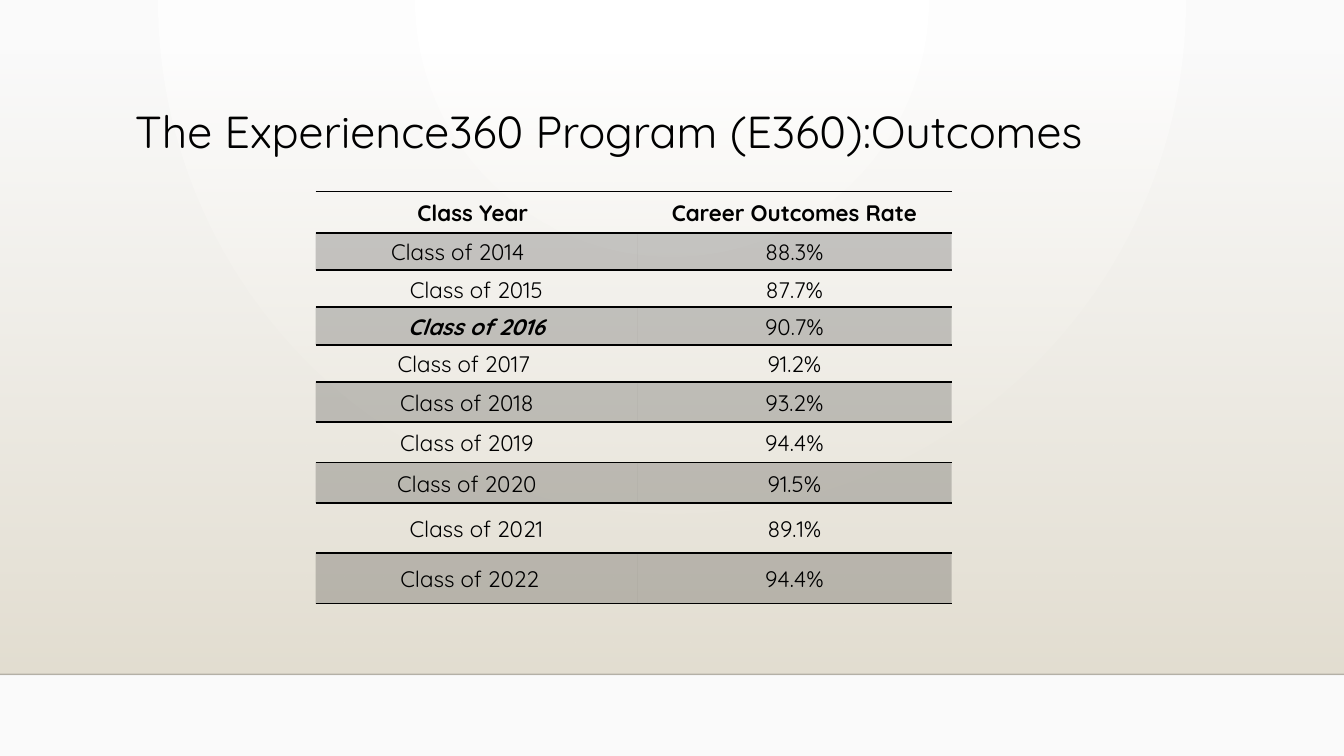
import pptx
import pptx.dml.color
import pptx.enum.shapes
import pptx.enum.text
import pptx.oxml
import pptx.oxml.ns
import pptx.util
from pptx.util import Inches

FONT = "Quicksand"
BLACK = "000000"
NO_STYLE_NO_GRID = "{2D5ABB26-0587-4C30-8999-92F81FD0307C}"
NAMESPACE = 'xmlns:a="http://schemas.openxmlformats.org/drawingml/2006/main"'

COLUMN_WIDTHS = [3.19, 3.12]
ROW_HEIGHTS = [0.41] + [0.37] * 4 + [0.4] * 3 + [0.5] * 2
CELL_MARGIN = 0.07
# Year, career outcomes rate, extra right margin of the year's cell
OUTCOMES = [
    (2014, "88.3%", 0.37),
    (2015, "87.7%", 0),
    (2016, "90.7%", 0),
    (2017, "91.2%", 0.25),
    (2018, "93.2%", 0.19),
    (2019, "94.4%", 0.19),
    (2020, "91.5%", 0.19),
    (2021, "89.1%", 0),
    (2022, "94.4%", 0.13),
]
HIGHLIGHTED_YEAR = 2016


def rgb(color):
    return pptx.dml.color.RGBColor.from_string(color)


def set_opacity(element, percent):
    """Set the opacity of the first RGB colour inside an XML element."""
    color = next(element.iter(pptx.oxml.ns.qn("a:srgbClr")))
    color.append(pptx.oxml.parse_xml(f'<a:alpha {NAMESPACE} val="{percent * 1000}"/>'))


def fill_gradient(fill, *colors):
    fill.gradient()
    for stop, color in zip(fill.gradient_stops, colors):
        stop.color.rgb = rgb(color)


def set_background(slide):
    """Give the slide a round glow that starts at the middle of its top edge."""
    fill_gradient(slide.background.fill, "FFFFFF", "FAFAFA")
    linear = next(slide.element.iter(pptx.oxml.ns.qn("a:lin")))
    glow = pptx.oxml.parse_xml(
        f'<a:path {NAMESPACE} path="circle">'
        '<a:fillToRect l="43000" t="0" r="43000" b="100000"/></a:path>'
    )
    linear.getparent().replace(linear, glow)


def add_backdrop(slide, top, height):
    backdrop = slide.shapes.add_shape(
        pptx.enum.shapes.MSO_SHAPE.RECTANGLE,
        0, Inches(top), Inches(13.33), Inches(height),
    )
    backdrop.shadow.inherit = False
    backdrop.line.fill.background()
    fill_gradient(backdrop.fill, "E3DED1", "E4E0D3")
    backdrop.fill.gradient_angle = 270
    set_opacity(backdrop._element.spPr, 0)


def add_floor_line(slide, top):
    floor = slide.shapes.add_connector(
        pptx.enum.shapes.MSO_CONNECTOR.STRAIGHT,
        0, Inches(top), Inches(13.33), Inches(top),
    )
    floor.line.color.rgb = rgb("000001")
    floor.line.width = pptx.util.Pt(1)
    properties = floor._element.spPr
    set_opacity(properties, 20)
    properties.append(pptx.oxml.parse_xml(f"<a:effectLst {NAMESPACE}/>"))


def style_paragraph(paragraph, size, line_spacing):
    paragraph.line_spacing = line_spacing
    paragraph.font.name = FONT
    paragraph.font.size = pptx.util.Pt(size)
    paragraph.font.color.rgb = rgb(BLACK)


def add_title(slide, text):
    title = slide.shapes.add_textbox(
        Inches(1.24), Inches(1.04), Inches(11.06), Inches(1.15)
    )
    title.text_frame.word_wrap = True
    title.text_frame.text = text
    style_paragraph(title.text_frame.paragraphs[0], 32, 0.9)


def set_rules(cell, top, bottom):
    """Draw the cell's top and bottom borders, with widths in points."""
    properties = cell._tc.get_or_add_tcPr()
    for tag, width in (("lnT", top), ("lnB", bottom)):
        properties.append(pptx.oxml.parse_xml(
            f'<a:{tag} {NAMESPACE} w="{pptx.util.Pt(width)}"><a:solidFill>'
            f'<a:srgbClr val="{BLACK}"/></a:solidFill></a:{tag}>'
        ))


def fill_cell(cell, text, shaded, extra_margin=0):
    if shaded:
        cell.fill.solid()
        cell.fill.fore_color.rgb = rgb(BLACK)
        set_opacity(cell._tc.tcPr.find(pptx.oxml.ns.qn("a:solidFill")), 20)
    else:
        cell.fill.background()
    cell.margin_left = Inches(CELL_MARGIN)
    cell.margin_right = Inches(CELL_MARGIN + extra_margin)
    cell.margin_top = cell.margin_bottom = 0
    cell.vertical_anchor = pptx.enum.text.MSO_ANCHOR.MIDDLE
    cell.text = text
    paragraph = cell.text_frame.paragraphs[0]
    paragraph.alignment = pptx.enum.text.PP_ALIGN.CENTER
    style_paragraph(paragraph, 16, 1.07)
    return paragraph.font


def add_outcomes_table(slide):
    table = slide.shapes.add_table(
        len(ROW_HEIGHTS), len(COLUMN_WIDTHS), Inches(3.13), Inches(1.9),
        Inches(sum(COLUMN_WIDTHS)), Inches(sum(ROW_HEIGHTS)),
    ).table
    table.horz_banding = False
    style = next(table._tbl.iter(pptx.oxml.ns.qn("a:tableStyleId")))
    style.text = NO_STYLE_NO_GRID
    for column, width in zip(table.columns, COLUMN_WIDTHS):
        column.width = Inches(width)

    last = len(ROW_HEIGHTS) - 1
    for index, (row, height) in enumerate(zip(table.rows, ROW_HEIGHTS)):
        row.height = Inches(height)
        for cell in row.cells:
            set_rules(cell, 1 if index == 0 else 1.5, 1 if index == last else 1.5)

    fill_cell(table.cell(0, 0), "Class Year", False, 0.07).bold = True
    fill_cell(table.cell(0, 1), "Career Outcomes Rate", False).bold = True
    for index, (year, rate, extra_margin) in enumerate(OUTCOMES, start=1):
        shaded = index % 2 == 1
        year_font = fill_cell(
            table.cell(index, 0), f"Class of {year}", shaded, extra_margin
        )
        year_font.bold = year_font.italic = year == HIGHLIGHTED_YEAR
        fill_cell(table.cell(index, 1), rate, shaded)


def main():
    presentation = pptx.Presentation()
    presentation.slide_width = Inches(13.33)
    presentation.slide_height = Inches(7.5)
    slide = presentation.slides.add_slide(presentation.slide_layouts[6])
    set_background(slide)
    add_backdrop(slide, 0.51, 6.18)
    add_floor_line(slide, 6.69)
    add_title(slide, "The Experience360 Program (E360):Outcomes")
    add_outcomes_table(slide)
    presentation.save("out.pptx")


if __name__ == "__main__":
    main()
